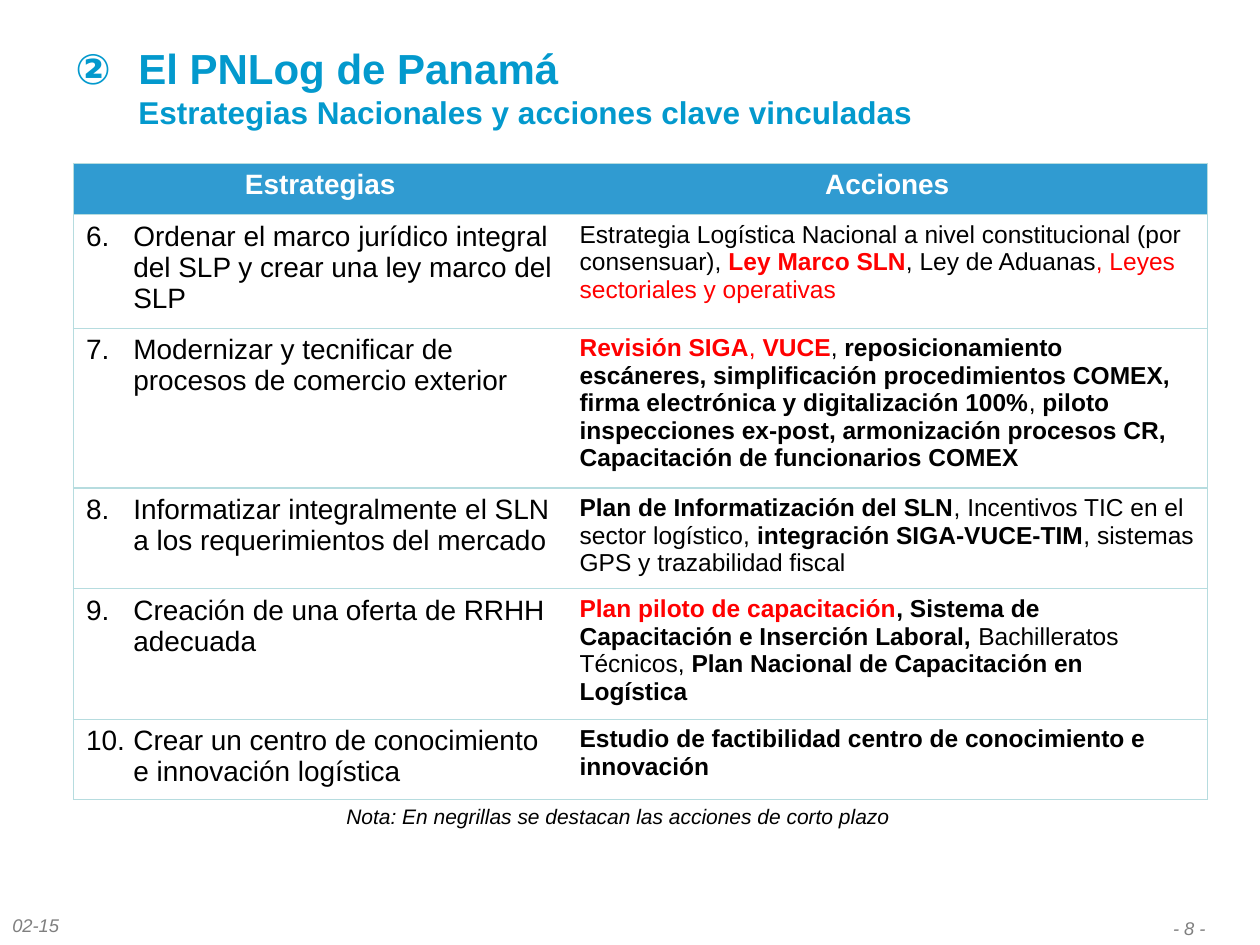
from lxml.etree import SubElement
from pptx import Presentation
from pptx.dml.color import RGBColor
from pptx.enum.text import MSO_ANCHOR, PP_ALIGN
from pptx.oxml.ns import qn
from pptx.util import Pt

BLACK, RED, WHITE, GREY = "000000", "FF0000", "FFFFFF", "7F7F7F"
TITLE_BLUE, HEADER_BLUE, BORDER = "0399CD", "309BD1", "B6DCDF"
COLUMN_WIDTHS = (282, 366)
ROW_HEIGHTS = (29.3, 64.6, 91.4, 57.4, 74.5, 45.4)
FIRST_STRATEGY = 6

PLAIN = (BLACK, False)
BOLD = (BLACK, True)
RED_PLAIN = (RED, False)
RED_BOLD = (RED, True)

STRATEGIES = [
    ("Ordenar el marco jurídico integral del SLP y crear una ley marco del SLP", [
        ("Estrategia Logística Nacional a nivel constitucional (por consensuar), ", PLAIN),
        ("Ley Marco SLN", RED_BOLD),
        (", Ley de Aduanas", PLAIN),
        (", Leyes sectoriales y operativas", RED_PLAIN)]),
    ("Modernizar y tecnificar de procesos de comercio exterior", [
        ("Revisión SIGA", RED_BOLD),
        (", ", RED_PLAIN),
        ("VUCE", RED_BOLD),
        (", ", PLAIN),
        ("reposicionamiento escáneres, simplificación procedimientos COMEX, "
         "firma electrónica y digitalización 100%", BOLD),
        (", ", PLAIN),
        ("piloto inspecciones ex-post, armonización procesos CR, "
         "Capacitación de funcionarios COMEX", BOLD)]),
    ("Informatizar integralmente el SLN a los requerimientos del mercado", [
        ("Plan de Informatización del SLN", BOLD),
        (", Incentivos TIC en el sector logístico, ", PLAIN),
        ("integración SIGA-VUCE-TIM", BOLD),
        (", sistemas GPS y trazabilidad fiscal", PLAIN)]),
    ("Creación de una oferta de RRHH adecuada", [
        ("Plan piloto de capacitación", RED_BOLD),
        (", Sistema de Capacitación e Inserción Laboral, ", BOLD),
        ("Bachilleratos Técnicos, ", PLAIN),
        ("Plan Nacional de Capacitación en Logística", BOLD)]),
    ("Crear un centro de conocimiento e innovación logística", [
        ("Estudio de factibilidad centro de conocimiento e innovación", BOLD)]),
]


def rgb(color):
    """Turn a hex string into a colour."""
    return RGBColor.from_string(color)


def add_run(paragraph, text, size, color=BLACK, bold=False, italic=False):
    """Add one formatted run to a paragraph."""
    run = paragraph.add_run()
    run.text = text
    font = run.font
    font.name, font.size, font.bold, font.italic = "Arial", Pt(size), bold, italic
    font.color.rgb = rgb(color)


def number_paragraph(paragraph, scheme, start, indent):
    """Give a paragraph an automatic number with a hanging indent."""
    properties = paragraph._p.get_or_add_pPr()
    properties.set("marL", str(Pt(indent)))
    properties.set("indent", str(-Pt(indent)))
    SubElement(properties, qn("a:buFont"), typeface="+mj-lt")
    SubElement(properties, qn("a:buAutoNum"), type=scheme, startAt=str(start))


def add_text_box(slide, left, top, width, height, wrap=True):
    """Add a text box and return its text frame."""
    frame = slide.shapes.add_textbox(Pt(left), Pt(top), Pt(width), Pt(height)).text_frame
    frame.word_wrap = wrap
    return frame


def add_title(slide):
    """Add the numbered title with its subtitle line."""
    frame = add_text_box(slide, 36, 0, 642, 98.6)
    frame.vertical_anchor = MSO_ANCHOR.MIDDLE
    paragraph = frame.paragraphs[0]
    number_paragraph(paragraph, "circleNumDbPlain", 2, 36)
    add_run(paragraph, "El PNLog de Panamá", 24, TITLE_BLUE, bold=True)
    paragraph.add_line_break()
    add_run(paragraph, "Estrategias Nacionales y acciones clave vinculadas", 18,
            TITLE_BLUE, bold=True)


def add_caption(slide, text, box, size, color, align=PP_ALIGN.LEFT, wrap=True):
    """Add a single italic line of text."""
    paragraph = add_text_box(slide, *box, wrap=wrap).paragraphs[0]
    paragraph.alignment = align
    add_run(paragraph, text, size, color, italic=True)


def set_borders(cell, visible):
    """Draw the named sides of a cell and hide the others."""
    properties = cell._tc.get_or_add_tcPr()
    for side in "LRTB":
        line = SubElement(properties, qn(f"a:ln{side}"), w=str(Pt(0.75)))
        if side in visible:
            fill = SubElement(line, qn("a:solidFill"))
            SubElement(fill, qn("a:srgbClr"), val=BORDER)
        else:
            SubElement(line, qn("a:noFill"))


def add_strategy_table(slide):
    """Add the table of strategies and their actions."""
    table = slide.shapes.add_table(
        len(ROW_HEIGHTS), len(COLUMN_WIDTHS), Pt(42), Pt(93.4),
        Pt(sum(COLUMN_WIDTHS)), Pt(sum(ROW_HEIGHTS))).table
    table.first_row = table.horz_banding = False
    for column, width in zip(table.columns, COLUMN_WIDTHS):
        column.width = Pt(width)
    for row, height in zip(table.rows, ROW_HEIGHTS):
        row.height = Pt(height)
        for cell, outer_side in zip(row.cells, "LR"):
            set_borders(cell, outer_side + "TB")
            cell.fill.background()

    for cell, heading in zip(table.rows[0].cells, ("Estrategias", "Acciones")):
        cell.fill.solid()
        cell.fill.fore_color.rgb = rgb(HEADER_BLUE)
        paragraph = cell.text_frame.paragraphs[0]
        paragraph.alignment = PP_ALIGN.CENTER
        add_run(paragraph, heading, 16, WHITE, bold=True)

    for index, (strategy, actions) in enumerate(STRATEGIES):
        strategy_paragraph, action_paragraph = (
            table.cell(index + 1, column).text_frame.paragraphs[0] for column in range(2))
        number_paragraph(strategy_paragraph, "arabicPeriod", FIRST_STRATEGY + index, 27)
        add_run(strategy_paragraph, strategy, 16)
        for text, (color, bold) in actions:
            add_run(action_paragraph, text, 14, color, bold)


def main():
    """Build the slide and save it."""
    presentation = Presentation()
    presentation.slide_width, presentation.slide_height = Pt(720), Pt(540)
    slide = presentation.slides.add_slide(presentation.slide_layouts[6])
    add_title(slide)
    add_caption(slide, "02-15", (0, 519, 78, 21), 10.5, GREY)
    add_caption(slide, "- 8 -", (630, 520.5, 66, 19.5), 10.5, GREY, PP_ALIGN.RIGHT)
    add_strategy_table(slide)
    add_caption(slide, "Nota: En negrillas se destacan las acciones de corto plazo",
                (190.8, 455.8, 331, 21.8), 12, BLACK, wrap=False)
    presentation.save("out.pptx")


if __name__ == "__main__":
    main()
